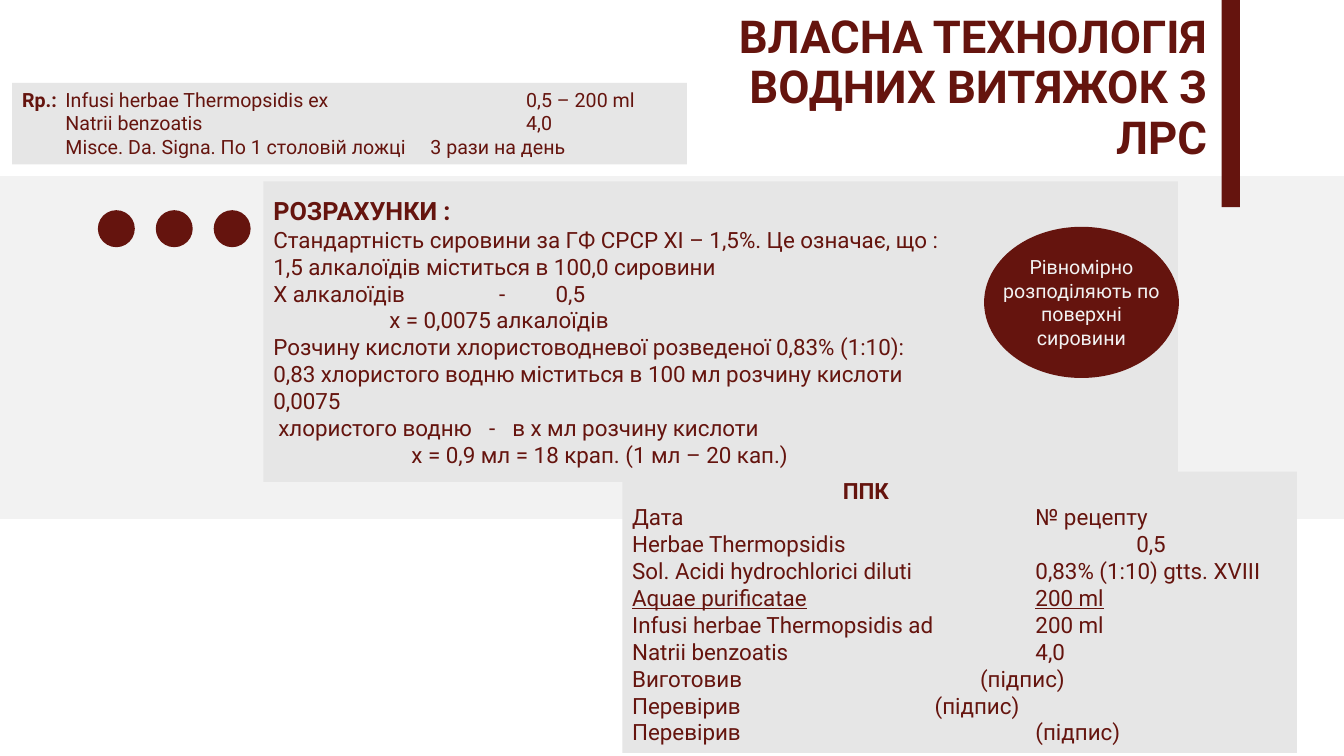
from dataclasses import dataclass

from lxml import etree
from pptx import Presentation
from pptx.dml.color import RGBColor
from pptx.enum.shapes import MSO_SHAPE
from pptx.enum.text import MSO_ANCHOR, PP_ALIGN
from pptx.oxml.ns import qn
from pptx.util import Inches, Pt

RECT, OVAL = MSO_SHAPE.RECTANGLE, MSO_SHAPE.OVAL
TOP, MIDDLE = MSO_ANCHOR.TOP, MSO_ANCHOR.MIDDLE
LEFT, CENTER, RIGHT = PP_ALIGN.LEFT, PP_ALIGN.CENTER, PP_ALIGN.RIGHT


@dataclass(frozen=True)
class Theme:
    """Colours, font and type sizes."""
    accent: RGBColor = RGBColor(0x65, 0x14, 0x0E)
    pale: RGBColor = RGBColor(0xF2, 0xF2, 0xF2)
    panel: RGBColor = RGBColor(0xE6, 0xE6, 0xE6)
    font: str = "Roboto"
    title: float = 32.4
    heading: float = 18
    body: float = 16
    small: float = 14


@dataclass(frozen=True)
class Box:
    """A rectangle in EMU."""
    x: int
    y: int
    w: int
    h: int

    def inner(self, x, y, w, h):
        """Return an inner box given in percent of this one."""
        return Box(int(self.x + self.w * x / 100), int(self.y + self.h * y / 100),
                   int(self.w * w / 100), int(self.h * h / 100))


@dataclass(frozen=True)
class Line:
    """One paragraph: text, tab stops in inches and emphasis."""
    text: str
    tabs: tuple = ()
    size: float = 0
    bold: bool = False
    underline: bool = False
    lead: str = ""


T = Theme()


def add_shape(s, kind, box, fill):
    """Add a flat filled shape."""
    sp = s.shapes.add_shape(kind, box.x, box.y, box.w, box.h)
    sp.shadow.inherit = False
    sp.fill.solid()
    sp.fill.fore_color.rgb = fill
    sp.line.fill.background()
    return sp


def set_tabs(p, stops):
    """Give a paragraph left tab stops."""
    tabs = etree.SubElement(p._p.get_or_add_pPr(), qn("a:tabLst"))
    for stop in stops:
        etree.SubElement(tabs, qn("a:tab"), pos=str(Inches(stop)), algn="l")


def write(sp, lines, size, color=T.accent, align=LEFT, anchor=TOP, wrap=True):
    """Fill a shape with lines of text."""
    tf = sp.text_frame
    tf.word_wrap, tf.vertical_anchor = wrap, anchor
    for i, line in enumerate(lines):
        p = tf.paragraphs[0] if i == 0 else tf.add_paragraph()
        p.alignment = align
        if line.tabs:
            set_tabs(p, line.tabs)
        f = p.font
        f.name, f.size, f.color.rgb = T.font, Pt(line.size or size), color
        f.bold, f.underline = line.bold, line.underline
        if line.lead:
            r = p.add_run()
            r.text, r.font.bold = line.lead, True
        p.add_run().text = line.text
    return tf


def decoration(s, box):
    """Draw the pale band, the corner bar and the three dots."""
    band = add_shape(s, RECT, box.inner(0, 23.33, 100, 45.2), T.pale)
    band.line.color.rgb, band.line.width = T.pale, Pt(1)
    add_shape(s, RECT, box.inner(90.9, 0, 1.35, 27.4), T.accent)
    for i in range(3):
        add_shape(s, OVAL, box.inner(7.28 + 4.31 * i, 27.8, 2.75, 4.9), T.accent)


def title(s, box):
    """Place the right-aligned slide title."""
    sp = s.shapes.add_textbox(box.x, box.y, box.w, box.h)
    tf = write(sp, [Line("ВЛАСНА ТЕХНОЛОГІЯ ВОДНИХ ВИТЯЖОК З ЛРС", bold=True)],
               T.title, align=RIGHT, anchor=MIDDLE)
    tf.margin_bottom = Inches(0.55)
    tf.paragraphs[0].line_spacing = Pt(36)


def calculations(s, box):
    """Place the calculation panel with its round remark."""
    write(add_shape(s, RECT, box, T.panel), [
        Line("РОЗРАХУНКИ :", size=T.heading, bold=True),
        Line("Стандартність сировини за ГФ СРСР ХI – 1,5%. Це означає, що :"),
        Line("1,5 алкалоїдів міститься в 100,0 сировини"),
        Line("Х алкалоїдів\t-\t0,5", (2.24, 2.8)),
        Line("\tх = 0,0075 алкалоїдів", (1.15,)),
        Line("Розчину кислоти хлористоводневої розведеної 0,83% (1:10):"),
        Line("0,83 хлористого водню міститься в 100 мл розчину кислоти"),
        Line("0,0075"),
        Line("\tхлористого водню\t-\tв х мл розчину кислоти", (0.05, 2.14, 2.37)),
        Line("\tх = 0,9 мл = 18 крап. (1 мл – 20 кап.)", (1.37,)),
    ], T.body, anchor=MIDDLE)
    remark = add_shape(s, OVAL, box.inner(78.8, 15.1, 21.3, 50.3), T.accent)
    words = ("Рівномірно", "розподіляють по", "поверхні", "сировини")
    write(remark, [Line(w) for w in words], T.small, T.pale, CENTER, MIDDLE, False)


def prescription(s, box):
    """Place the prescription panel."""
    tabs = (0.43, 5)
    write(add_shape(s, RECT, box, T.panel), [
        Line("\tInfusi herbae Thermopsidis ex\t0,5 – 200 ml", tabs, lead="Rp.:"),
        Line("\tNatrii benzoatis\t4,0", tabs),
        Line("\tMisce. Da. Signa. По 1 столовій ложці\t3 рази на день", (0.43, 4.05)),
    ], T.small)


def control_passport(s, box):
    """Place the written control passport panel."""
    tabs = (4,)
    write(add_shape(s, RECT, box, T.panel), [
        Line("\tППК", (2.09,), bold=True),
        Line("Дата\t№ рецепту", tabs),
        Line("Herbae Thermopsidis\t0,5", (5,)),
        Line("Sol. Acidi hydrochlorici diluti\t0,83% (1:10) gtts. XVIII", tabs),
        Line("Aquae purificatae\t200 ml", tabs, underline=True),
        Line("Infusi herbae Thermopsidis ad\t200 ml", tabs),
        Line("Natrii benzoatis\t4,0", tabs),
        Line("Виготовив\t(підпис)", (3.45,)),
        Line("Перевірив\t(підпис)", (3,)),
        Line("Перевірив\t(підпис)", tabs),
    ], T.body)


def main():
    """Build and save the slide."""
    prs = Presentation()
    prs.slide_width, prs.slide_height = Inches(13.33), Inches(7.5)
    s = prs.slides.add_slide(prs.slide_layouts[6])
    page = Box(0, 0, prs.slide_width, prs.slide_height)
    decoration(s, page)
    calculations(s, page.inner(19.6, 24, 68.05, 39.75))
    prescription(s, page.inner(0.9, 10.95, 50.2, 10.8))
    control_passport(s, page.inner(46.3, 62.4, 50.2, 37.2))
    title(s, page.inner(48.85, 7.33, 41.7, 15.2))
    prs.save("out.pptx")


if __name__ == "__main__":
    main()
